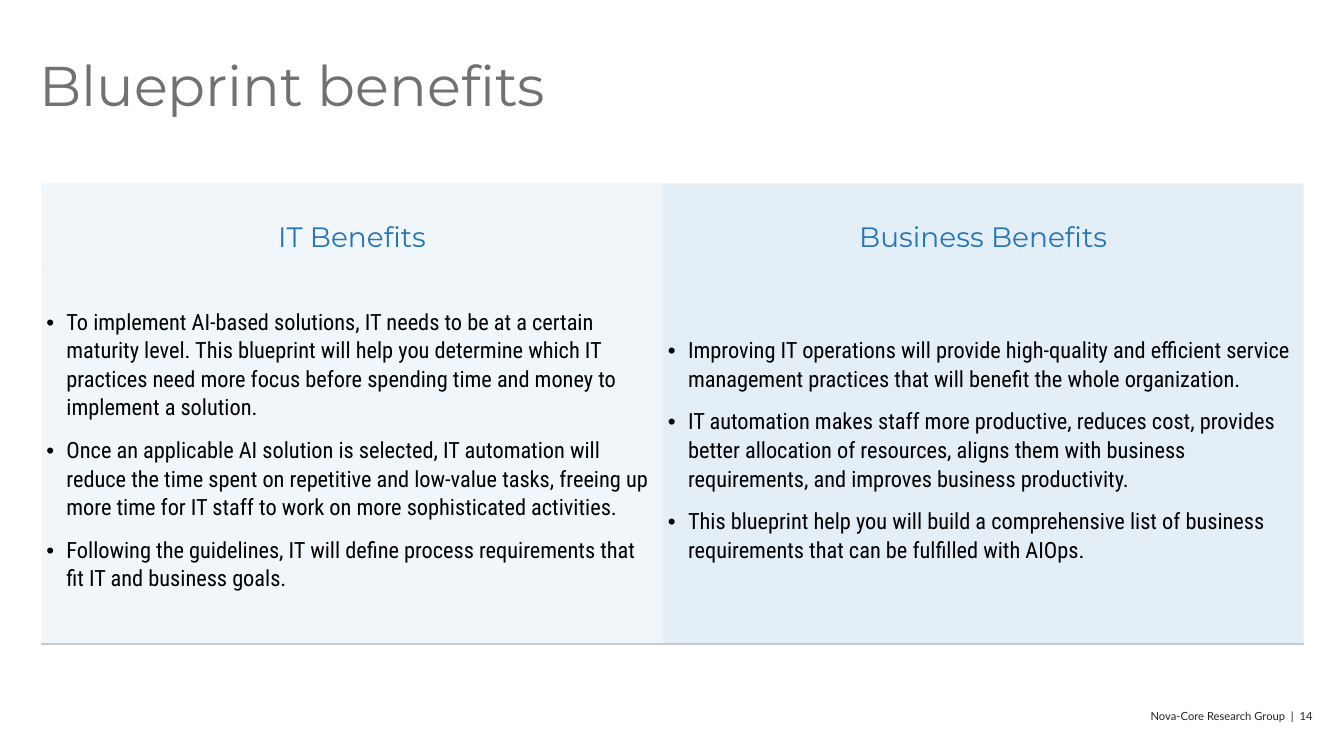
from lxml.etree import SubElement
from pptx import Presentation
from pptx.dml.color import RGBColor
from pptx.enum.text import MSO_ANCHOR as Anchor, PP_ALIGN as Align
from pptx.oxml import parse_xml
from pptx.oxml.ns import nsdecls, qn
from pptx.util import Inches, Pt

HUES = {"title": "717171", "head": "2576B7", "body": "000000",
        "foot": "242424", "panel": "7CADD4", "rule": "C9C9C9"}
NO_GRID = "{2D5ABB26-0587-4C30-8999-92F81FD0307C}"
WIDTHS = (6.17, 6.36)
HEIGHTS = (0.83, 3.74)
HEAD_PADS = (0.12, 0.24, 0.12, 0.12)
BODY_PADS = (0.05, 0.04, 0.12, 0.16)

# heading, panel opacity in percent, points
PANELS = [
    ("IT Benefits", 10, [
        "To implement AI-based solutions, IT needs to be at a certain maturity level. "
        "This blueprint will help you determine which IT practices need more focus "
        "before spending time and money to implement a solution.",
        "Once an applicable AI solution is selected, IT automation will reduce the time "
        "spent on repetitive and low-value tasks, freeing up more time for IT staff to "
        "work on more sophisticated activities.",
        "Following the guidelines, IT will define process requirements that fit IT and "
        "business goals.",
    ]),
    ("Business Benefits", 20, [
        "Improving IT operations will provide high-quality and efficient service "
        "management practices that will benefit the whole organization.",
        "IT automation makes staff more productive, reduces cost, provides better "
        "allocation of resources, aligns them with business requirements, and improves "
        "business productivity.",
        "This blueprint help you will build a comprehensive list of business "
        "requirements that can be fulfilled with AIOps.",
    ]),
]


def add_run(para, text, size, font, hue):
    run = para.add_run()
    run.text = text
    run.font.size = Pt(size)
    run.font.name = font
    run.font.color.rgb = RGBColor.from_string(HUES[hue])


def set_pads(area, pads):
    """Set the inner margins of a text frame or cell: left, top, right, bottom."""
    for side, pad in zip(("left", "top", "right", "bottom"), pads):
        setattr(area, f"margin_{side}", Inches(pad))


def add_text(slide, box, pads, align, text, size, font, hue):
    frame = slide.shapes.add_textbox(*map(Inches, box)).text_frame
    frame.word_wrap = True
    set_pads(frame, pads)
    para = frame.paragraphs[0]
    para.alignment = align
    para.line_spacing = 0.9
    add_run(para, text, size, font, hue)


def tint(cell, alpha):
    cell.fill.solid()
    cell.fill.fore_color.rgb = RGBColor.from_string(HUES["panel"])
    color = cell._tc.tcPr.find(".//" + qn("a:srgbClr"))
    SubElement(color, qn("a:alpha"), val=str(alpha * 1000))


def rule_off(cell):
    """Draw the thin line under a cell."""
    cell._tc.tcPr.insert(0, parse_xml(
        f'<a:lnB {nsdecls("a")} w="12700"><a:solidFill>'
        f'<a:srgbClr val="{HUES["rule"]}"/></a:solidFill></a:lnB>'))


def fill_head(cell, text, alpha):
    cell.vertical_anchor = Anchor.BOTTOM
    set_pads(cell, HEAD_PADS)
    para = cell.text_frame.paragraphs[0]
    para.alignment = Align.CENTER
    add_run(para, text, 20, "Montserrat", "head")
    tint(cell, alpha)


def add_bullet(para, text):
    para.line_spacing = 1.1
    para.space_before = Pt(10)
    props = para._p.get_or_add_pPr()
    props.set("marL", str(Inches(0.2)))
    props.set("indent", str(Inches(-0.2)))
    SubElement(props, qn("a:buFont"), typeface="Arial")
    SubElement(props, qn("a:buChar"), char="•")
    add_run(para, text, 16, "Roboto Condensed", "body")


def fill_body(cell, points, alpha):
    cell.vertical_anchor = Anchor.MIDDLE
    set_pads(cell, BODY_PADS)
    frame = cell.text_frame
    for i, point in enumerate(points):
        add_bullet(frame.add_paragraph() if i else frame.paragraphs[0], point)
    tint(cell, alpha)
    rule_off(cell)


def add_panels(slide):
    table = slide.shapes.add_table(
        len(HEIGHTS), len(WIDTHS), Inches(0.41), Inches(1.82),
        Inches(sum(WIDTHS)), Inches(sum(HEIGHTS))).table
    table.first_row = table.horz_banding = False
    table._tbl.tblPr.find(qn("a:tableStyleId")).text = NO_GRID
    for row, height in zip(table.rows, HEIGHTS):
        row.height = Inches(height)
    for i, (head, alpha, points) in enumerate(PANELS):
        table.columns[i].width = Inches(WIDTHS[i])
        fill_head(table.cell(0, i), head, alpha)
        fill_body(table.cell(1, i), points, alpha)


def main():
    deck = Presentation()
    deck.slide_width, deck.slide_height = Inches(13.34), Inches(7.5)
    slide = deck.slides.add_slide(deck.slide_layouts[6])
    add_text(slide, (0.39, 0.58, 9.24, 1.24), (0, 0, 0, 0), Align.LEFT,
             "Blueprint benefits", 40, "Montserrat", "title")
    add_panels(slide)
    add_text(slide, (9.37, 7.05, 3.76, 0.13), (0, 0, 0.1, 0), Align.RIGHT,
             "Nova-Core Research Group\u00a0 |\u00a0 14".replace("\u00a0", " "),
             8, "Lato", "foot")
    deck.save("out.pptx")


if __name__ == "__main__":
    main()
